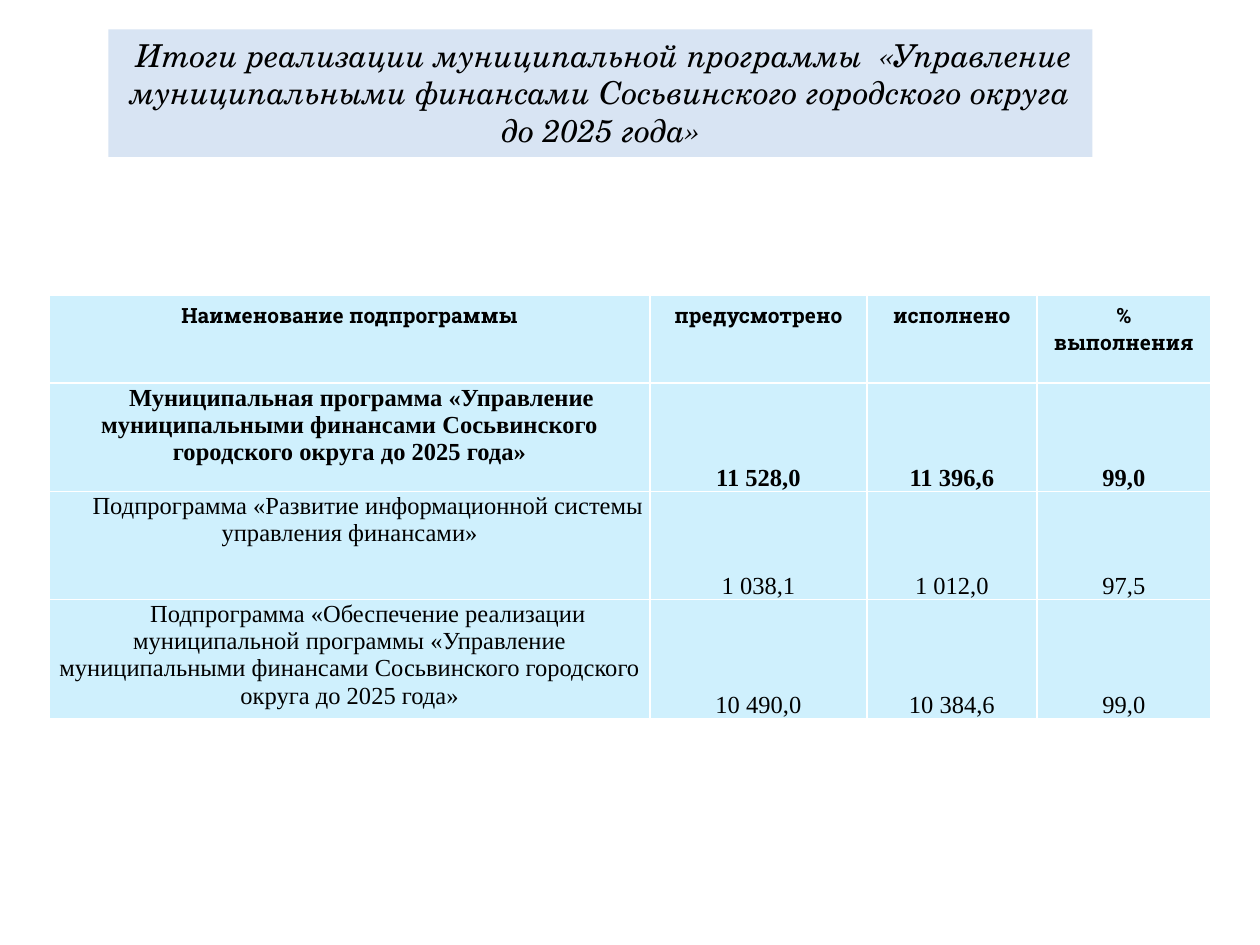
"""Builds a slide on the results of a municipal finance programme."""
from pptx import Presentation, util as u
from pptx.dml.color import RGBColor
from pptx.enum import text

COLORS = {"ink": "000000", "banner": "D8E4F3", "cell": "CFF0FD"}
FONTS = {"title": "TeX Gyre Schola", "header": "Roboto Slab", "body": "Times New Roman"}

HEADING = ("Итоги реализации муниципальной программы  «Управление "
           "муниципальными финансами Сосьвинского городского округа до 2025 года»")
HEADER = ["Наименование подпрограммы", "предусмотрено", "исполнено", "% выполнения"]
RESULTS = [
    ["Муниципальная программа «Управление муниципальными финансами "
     "Сосьвинского городского округа до 2025 года»", "11 528,0", "11 396,6", "99,0"],
    ["Подпрограмма «Развитие информационной системы управления финансами»",
     "1 038,1", "1 012,0", "97,5"],
    ["Подпрограмма «Обеспечение реализации муниципальной программы «Управление "
     "муниципальными финансами Сосьвинского городского округа до 2025 года»",
     "10 490,0", "10 384,6", "99,0"],
]
COLUMN_WIDTHS = [4.77, 1.72, 1.35, 1.38]
ROW_HEIGHTS = [0.7, 0.86, 0.86, 0.86]


class Deck:
    """Holds the style and the current slide."""

    def __init__(self, width=10, height=7.5):
        self.prs = Presentation()
        self.prs.slide_width, self.prs.slide_height = u.Inches(width), u.Inches(height)
        self.slide = self.prs.slides.add_slide(self.prs.slide_layouts[5])

    def box(self, left, top, width, height):
        """Turns shares of the slide into lengths."""
        across, down = self.prs.slide_width, self.prs.slide_height
        return int(left * across), int(top * down), int(width * across), int(height * down)

    def fill(self, part, color):
        """Gives a shape or a cell a solid colour."""
        part.fill.solid()
        part.fill.fore_color.rgb = RGBColor.from_string(COLORS[color])

    def label(self, frame, words, font, size, bold=False, italic=False, indent=0, spacing=1.0):
        """Sets one centred, formatted paragraph."""
        frame.text = words
        frame.word_wrap = True
        paragraph = frame.paragraphs[0]
        paragraph.alignment = text.PP_ALIGN.CENTER
        paragraph.line_spacing = spacing
        if indent:
            properties = paragraph._p.get_or_add_pPr()
            properties.set("marL", "0")
            properties.set("indent", str(u.Inches(indent)))
        for run in paragraph.runs:
            run.font.name, run.font.size = FONTS[font], u.Pt(size)
            run.font.bold, run.font.italic = bold, italic
            run.font.color.rgb = RGBColor.from_string(COLORS["ink"])

    def title(self, words, *shares):
        """Places the title on its banner."""
        banner = self.slide.shapes.title
        banner.left, banner.top, banner.width, banner.height = self.box(*shares)
        self.fill(banner, "banner")
        self.label(banner.text_frame, words, "title", 18, italic=True, indent=0.06)
        banner.text_frame.vertical_anchor = text.MSO_ANCHOR.TOP
        banner.text_frame.auto_size = text.MSO_AUTO_SIZE.SHAPE_TO_FIT_TEXT

    def margins(self, cell, side, top):
        """Sets the insets of a cell, with none at the bottom."""
        cell.margin_left = cell.margin_right = u.Inches(side)
        cell.margin_top, cell.margin_bottom = u.Inches(top), 0

    def table(self, header, results, widths, heights, *shares):
        """Adds the results table with the overall programme in bold."""
        rows = [header, *results]
        table = self.slide.shapes.add_table(len(rows), len(header), *self.box(*shares)).table
        for column, width in zip(table.columns, widths):
            column.width = u.Inches(width)
        for row, height in zip(table.rows, heights):
            row.height = u.Inches(height)
        for r, row in enumerate(rows):
            for c, words in enumerate(row):
                cell = table.cell(r, c)
                self.fill(cell, "cell")
                if r == 0:
                    self.label(cell.text_frame, words, "header", 12, bold=True)
                elif c == 0:
                    self.margins(cell, 0.01, 0.01)
                    self.label(cell.text_frame, words, "body", 14, bold=r == 1,
                               indent=0.19 if r == 1 else 0.29)
                else:
                    self.margins(cell, 0.07, 0)
                    cell.vertical_anchor = text.MSO_ANCHOR.BOTTOM
                    self.label(cell.text_frame, words, "body", 14, bold=r == 1, spacing=1.15)


def main():
    deck = Deck()
    deck.title(HEADING, 0.086, 0.031, 0.781, 0.135)
    deck.table(HEADER, RESULTS, COLUMN_WIDTHS, ROW_HEIGHTS, 0.039, 0.312, 0.922, 0.437)
    deck.prs.save("out.pptx")


if __name__ == "__main__":
    main()
